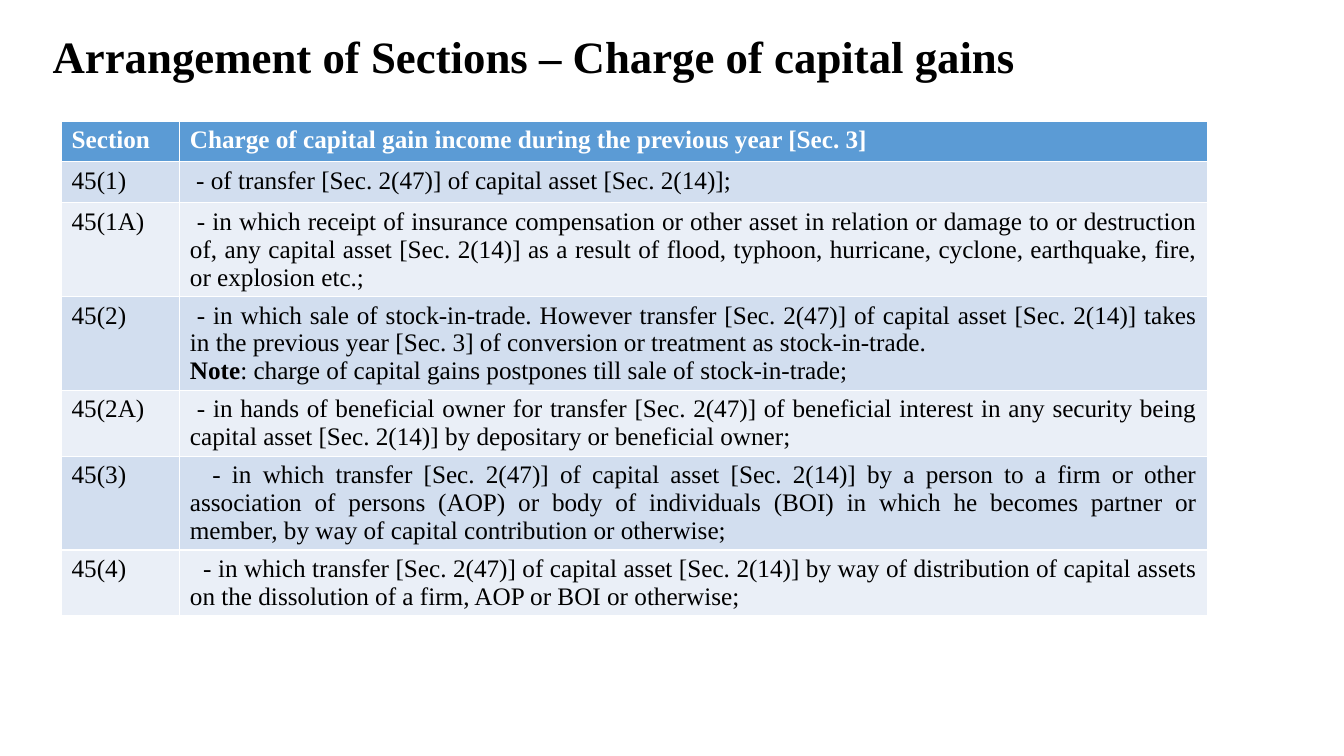
import pptx
import pptx.util
import pptx.dml.color
import pptx.enum.text

Pt = pptx.util.Pt
ALIGN = pptx.enum.text.PP_ALIGN
COLORS = {"black": "000000", "white": "FFFFFF", "header": "5B9BD5",
          "odd": "D2DEEF", "even": "EAEFF7"}

HEADER = ("Section", "Charge of capital gain income during the previous year [Sec. 3]")
SECTIONS = [
    ("45(1)", 4.5, ["- of transfer [Sec. 2(47)] of capital asset [Sec. 2(14)];"]),
    ("45(1A)", 5, ["- in which receipt of insurance compensation or other asset in relation or damage to or destruction of, any capital asset [Sec. 2(14)] as a result of flood, typhoon, hurricane, cyclone, earthquake, fire, or explosion etc.;"]),
    ("45(2)", 5, ["- in which sale of stock-in-trade. However transfer [Sec. 2(47)] of capital asset [Sec. 2(14)] takes in the previous year [Sec. 3] of conversion or treatment as stock-in-trade.",
                  ("Note", ": charge of capital gains postpones till sale of stock-in-trade;")]),
    ("45(2A)", 5, ["- in hands of beneficial owner for transfer [Sec. 2(47)] of beneficial interest in any security being capital asset [Sec. 2(14)] by depositary or beneficial owner;"]),
    ("45(3)", 16, ["- in which transfer [Sec. 2(47)] of capital asset [Sec. 2(14)] by a person to a firm or other association of persons (AOP) or body of individuals (BOI) in which he becomes partner or member, by way of capital contribution or otherwise;"]),
    ("45(4)", 9.5, ["- in which transfer [Sec. 2(47)] of capital asset [Sec. 2(14)] by way of distribution of capital assets on the dissolution of a firm, AOP or BOI or otherwise;"]),
]


class Deck:
    font = "Times New Roman"

    def __init__(self, width, height):
        self.prs = pptx.Presentation()
        self.prs.slide_width, self.prs.slide_height = Pt(width), Pt(height)
        self.s = self.prs.slides.add_slide(self.prs.slide_layouts[5])

    def color(self, name):
        return pptx.dml.color.RGBColor.from_string(COLORS[name])

    def run(self, p, text, size, color="black", bold=False):
        r = p.add_run()
        r.text = text
        for key, value in {"name": self.font, "size": Pt(size), "bold": bold}.items():
            setattr(r.font, key, value)
        r.font.color.rgb = self.color(color)

    def title(self, text, left, top, width, height):
        sp = self.s.shapes.title
        for key, value in {"left": left, "top": top, "width": width, "height": height}.items():
            setattr(sp, key, Pt(value))
        tf = sp.text_frame
        tf.auto_size = pptx.enum.text.MSO_AUTO_SIZE.NONE
        tf.vertical_anchor = pptx.enum.text.MSO_ANCHOR.MIDDLE
        p = tf.paragraphs[0]
        p.alignment, p.line_spacing = ALIGN.LEFT, 0.9
        self.run(p, text, 32, bold=True)

    def cell(self, cell, paragraphs, fill, color="black", bold=False, align=ALIGN.LEFT, indent=0):
        cell.fill.solid()
        cell.fill.fore_color.rgb = self.color(fill)
        tf = cell.text_frame
        for i, content in enumerate(paragraphs):
            p = tf.add_paragraph() if i else tf.paragraphs[0]
            p.alignment = align
            if indent and not i:
                p._p.get_or_add_pPr().set("indent", str(Pt(indent)))
            if isinstance(content, tuple):
                label, content = content
                self.run(p, label, 18, color, True)
            self.run(p, content, 18, color, bold)

    def table(self, header, sections, left, top, widths, row_height):
        rows = len(sections) + 1
        table = self.s.shapes.add_table(rows, len(widths), Pt(left), Pt(top),
                                        Pt(sum(widths)), Pt(row_height * rows)).table
        for column, width in zip(table.columns, widths):
            column.width = Pt(width)
        for i, text in enumerate(header):
            self.cell(table.cell(0, i), [text], "header", "white", True)
        for i, (section, indent, paragraphs) in enumerate(sections, 1):
            fill = "odd" if i % 2 else "even"
            self.cell(table.cell(i, 0), [section], fill)
            self.cell(table.cell(i, 1), paragraphs, fill, align=ALIGN.JUSTIFY, indent=indent)


def main():
    deck = Deck(960, 540)
    deck.title("Arrangement of Sections – Charge of capital gains", 30.4, 8, 705.6, 68.4)
    deck.table(HEADER, SECTIONS, 44, 86.4, (84.5, 734), 29.2)
    deck.prs.save("out.pptx")


if __name__ == "__main__":
    main()
